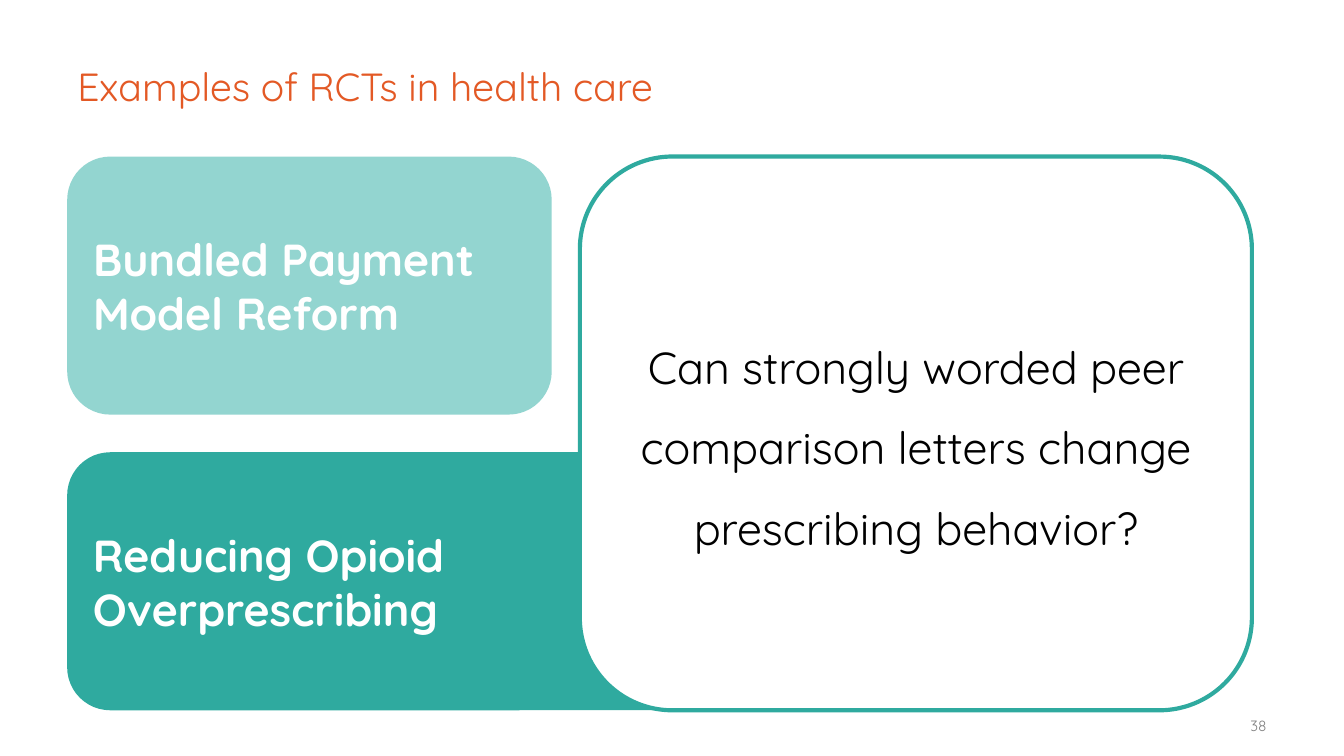
from pptx import Presentation
from pptx.dml.color import RGBColor
from pptx.enum.shapes import MSO_SHAPE as Shape
from pptx.enum.text import MSO_ANCHOR as Anchor, PP_ALIGN as Align
from pptx.util import Pt

EMU_PER_PX = 4572  # 200 px to the inch
FONT = "Quicksand"
ORANGE = RGBColor(0xE3, 0x59, 0x25)
GRAY = RGBColor(0x7F, 0x7F, 0x7F)
LIGHT_TEAL = RGBColor(0x93, 0xD5, 0xD0)
TEAL = RGBColor(0x2F, 0xAA, 0x9F)
WHITE = RGBColor(0xFF, 0xFF, 0xFF)
BLACK = RGBColor(0x00, 0x00, 0x00)

LEFT, TOP = 100, 233
TOPIC_HEIGHT, TOPIC_GAP = 384, 56


def px(length):
    return length * EMU_PER_PX


def write(box, lines, size, color, bold=False, align=Align.LEFT,
          anchor=Anchor.MIDDLE, inset=(20, 20)):
    """Fill a box with one paragraph per line and return its paragraphs."""
    frame = box.text_frame
    frame.word_wrap = True
    frame.vertical_anchor = anchor
    frame.margin_left = frame.margin_right = px(inset[0])
    frame.margin_top = frame.margin_bottom = px(inset[1])
    frame.text = "\n".join(lines)
    for para in frame.paragraphs:
        para.alignment = align
        para.font.name = FONT
        para.font.size = Pt(size)
        para.font.bold = bold
        para.font.color.rgb = color
    return frame.paragraphs


def add_label(page, bounds, text, size, color, **style):
    box = page.shapes.add_textbox(*map(px, bounds))
    write(box, [text], size, color, inset=(15, 8), **style)


def add_card(page, bounds, fill, line=None):
    card = page.shapes.add_shape(Shape.ROUNDED_RECTANGLE, *map(px, bounds))
    card.shadow.inherit = False
    card.adjustments[0] = 0.167
    card.fill.solid()
    card.fill.fore_color.rgb = fill
    if line is None:
        card.line.fill.background()
    else:
        card.line.color.rgb = line
        card.line.width = Pt(2.25)
    return card


def main():
    deck = Presentation()
    deck.slide_width, deck.slide_height = px(2000), px(1125)
    page = deck.slides.add_slide(deck.slide_layouts[6])

    # Title and page number
    add_label(page, (LEFT, 33, 1800, 190), "Examples of RCTs in health care",
              21, ORANGE)
    add_label(page, (1714, 1058, 186, 36), "38", 8, GRAY,
              align=Align.RIGHT, anchor=Anchor.TOP)

    # Topics: the active one runs on beneath the question panel
    topics = [
        (["Bundled Payment", "Model Reform"], 721, LIGHT_TEAL),
        (["Reducing Opioid", "Overprescribing"], 1068, TEAL),
    ]
    for row, (lines, width, fill) in enumerate(topics):
        top = TOP + row * (TOPIC_HEIGHT + TOPIC_GAP)
        card = add_card(page, (LEFT, top, width, TOPIC_HEIGHT), fill)
        write(card, lines, 24, WHITE, bold=True)

    # Question panel, as tall as both topics
    panel_height = 2 * TOPIC_HEIGHT + TOPIC_GAP
    panel = add_card(page, (863, TOP, 1000, panel_height), WHITE, TEAL)
    question = ("Can strongly worded peer comparison letters "
                "change prescribing behavior?")
    for para in write(panel, [question], 24, BLACK, align=Align.CENTER):
        para.line_spacing = 1.5
        para.space_before = Pt(7)

    deck.save("out.pptx")


if __name__ == "__main__":
    main()
